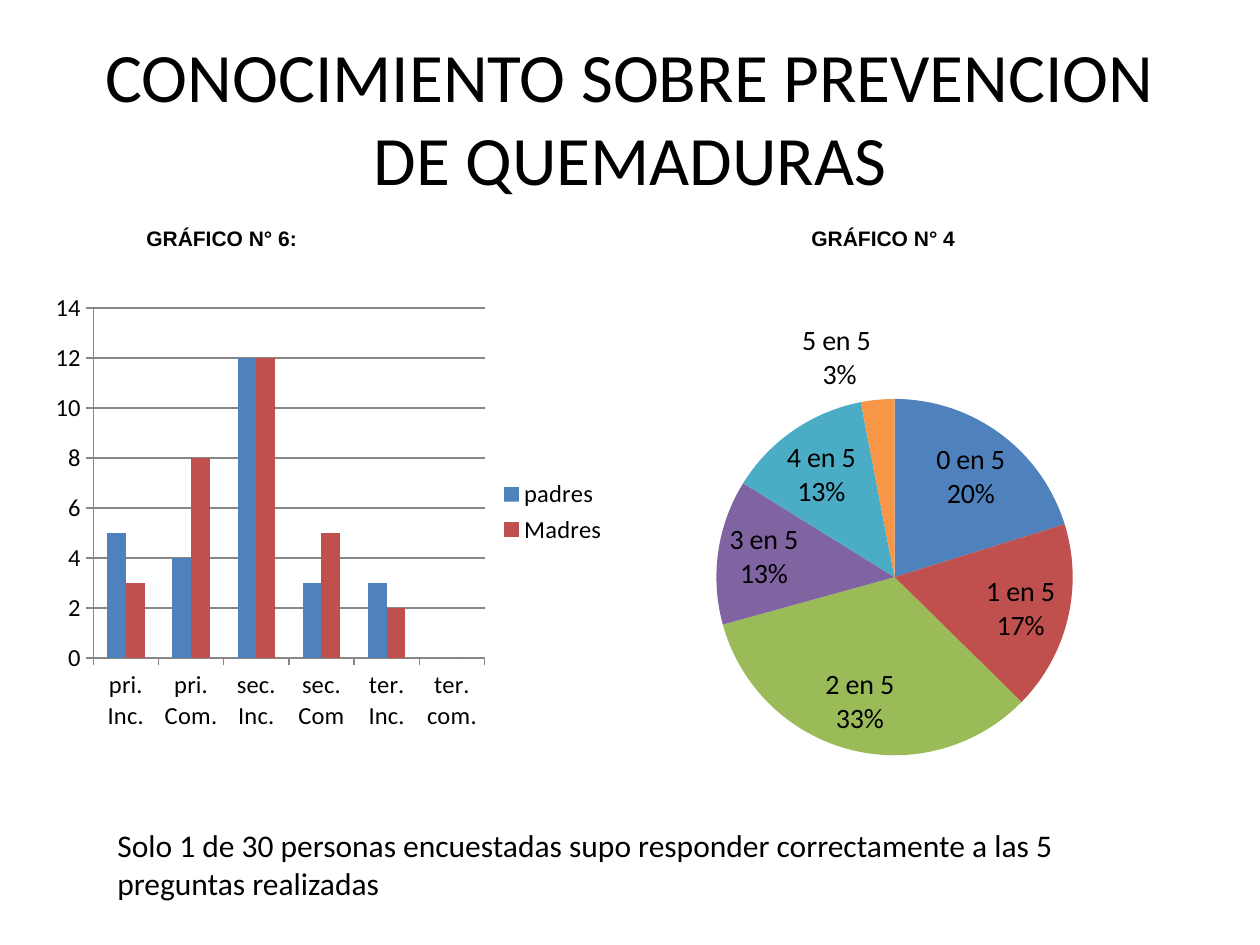
from lxml import etree
from pptx import Presentation
from pptx.chart.data import CategoryChartData
from pptx.dml.color import RGBColor
from pptx.enum.chart import XL_CHART_TYPE, XL_LABEL_POSITION, XL_LEGEND_POSITION, XL_TICK_MARK
from pptx.enum.text import MSO_ANCHOR, PP_ALIGN
from pptx.oxml import parse_xml
from pptx.oxml.ns import nsdecls, qn
from pptx.util import Pt

COLUMN = XL_CHART_TYPE.COLUMN_CLUSTERED
PIE = XL_CHART_TYPE.PIE
BEST_FIT = XL_LABEL_POSITION.BEST_FIT
LEGEND_RIGHT = XL_LEGEND_POSITION.RIGHT
TICK_OUTSIDE = XL_TICK_MARK.OUTSIDE
MIDDLE = MSO_ANCHOR.MIDDLE
TOP = MSO_ANCHOR.TOP
CENTER = PP_ALIGN.CENTER

BLACK = RGBColor(0x00, 0x00, 0x00)
GRAY = RGBColor(0x87, 0x87, 0x87)
BLUE = RGBColor(0x4F, 0x81, 0xBD)
RED = RGBColor(0xC0, 0x50, 0x4D)
GREEN = RGBColor(0x9B, 0xBB, 0x59)
PURPLE = RGBColor(0x80, 0x64, 0xA2)
TEAL = RGBColor(0x4B, 0xAC, 0xC6)
ORANGE = RGBColor(0xF7, 0x96, 0x46)

PX = 914400 // 126


def px(*lengths):
    return [length * PX for length in lengths]


def style_font(font, name, size, bold=False):
    font.name = name
    font.size = Pt(size)
    font.bold = bold
    font.color.rgb = BLACK


presentation = Presentation()
presentation.slide_width, presentation.slide_height = px(1260, 945)
slide = presentation.slides.add_slide(presentation.slide_layouts[5])

title = slide.shapes.title
title.left, title.top, title.width, title.height = px(63, 38, 1134, 157)
title.text_frame.text = "CONOCIMIENTO SOBRE PREVENCION DE QUEMADURAS"
title.text_frame.vertical_anchor = MIDDLE
title_paragraph = title.text_frame.paragraphs[0]
title_paragraph.alignment = CENTER
style_font(title_paragraph.runs[0].font, "Calibri", 39.6)

column_data = CategoryChartData()
column_data.categories = ["pri. Inc.", "pri. Com.", "sec. Inc.", "sec. Com", "ter. Inc.", "ter. com."]
column_data.add_series("padres", [5, 4, 12, 3, 3, 0])
column_data.add_series("Madres", [3, 8, 12, 5, 2, 0])
column_chart = slide.shapes.add_chart(COLUMN, *px(44, 284, 576, 456), column_data).chart
column_chart.has_title = False
style_font(column_chart.font, "Calibri", 14)
column_chart.has_legend = True
column_chart.legend.position = LEGEND_RIGHT
column_chart.legend.include_in_layout = False
column_plot = column_chart.plots[0]
column_plot.gap_width = 150
column_plot.overlap = 0
column_plot.vary_by_categories = False
for series, color in zip(column_plot.series, [BLUE, RED]):
    series.format.fill.solid()
    series.format.fill.fore_color.rgb = color
for axis in (column_chart.category_axis, column_chart.value_axis):
    axis.major_tick_mark = TICK_OUTSIDE
    axis.format.line.color.rgb = GRAY
value_axis = column_chart.value_axis
value_axis.minimum_scale, value_axis.maximum_scale, value_axis.major_unit = 0, 14, 2
value_axis.has_major_gridlines = True
value_axis.major_gridlines.format.line.color.rgb = GRAY

pie_data = CategoryChartData()
pie_data.categories = ["0 en 5", "1 en 5", "2 en 5", "3 en 5", "4 en 5", "5 en 5 "]
pie_data.add_series("Series 1", [20, 17, 33, 13, 13, 3])
pie_chart = slide.shapes.add_chart(PIE, *px(464, 238, 799, 684), pie_data).chart
pie_chart.has_title = False
pie_chart.has_legend = False
style_font(pie_chart.font, "Calibri", 10)
pie_series = pie_chart.plots[0].series[0]
for index, color in enumerate([BLUE, RED, GREEN, PURPLE, TEAL, ORANGE]):
    fill = pie_series.points[index].format.fill
    fill.solid()
    fill.fore_color.rgb = color

labels = pie_series.data_labels
labels.show_value = False
labels.show_category_name = True
labels.show_percentage = True
labels.position = BEST_FIT
style_font(labels.font, "Calibri", 16)
separator = etree.Element(qn("c:separator"))
separator.text = "\n"
pie_labels = pie_chart.element.find(".//" + qn("c:dLbls")) if hasattr(pie_chart, "element") else pie_series._element.find(qn("c:dLbls"))
pie_labels.find(qn("c:showBubbleSize")).addnext(separator)

plot_area = pie_series._element.getparent().getparent()
for layout in plot_area.findall(qn("c:layout")):
    plot_area.remove(layout)
plot_area.insert(0, parse_xml(
    f'<c:layout {nsdecls("c")}><c:manualLayout><c:layoutTarget val="inner"/>'
    '<c:xMode val="edge"/><c:yMode val="edge"/>'
    '<c:x val="0.316"/><c:y val="0.093"/><c:w val="0.446"/><c:h val="0.806"/>'
    '</c:manualLayout></c:layout>'))

text_boxes = [
    ("GRÁFICO N° 6:", (134, 219, 203, 38), MIDDLE, "Arial", 12, True),
    ("GRÁFICO N° 4", (799, 219, 198, 38), TOP, "Arial", 12, True),
    ("Solo 1 de 30 personas encuestadas supo responder correctamente a las 5 preguntas realizadas",
     (105, 820, 973, 89), TOP, "Calibri", 18, False),
]
for text, box, anchor, font_name, size, bold in text_boxes:
    text_frame = slide.shapes.add_textbox(*px(*box)).text_frame
    text_frame.word_wrap = True
    text_frame.vertical_anchor = anchor
    text_frame.text = text
    style_font(text_frame.paragraphs[0].runs[0].font, font_name, size, bold)

presentation.save("out.pptx")
